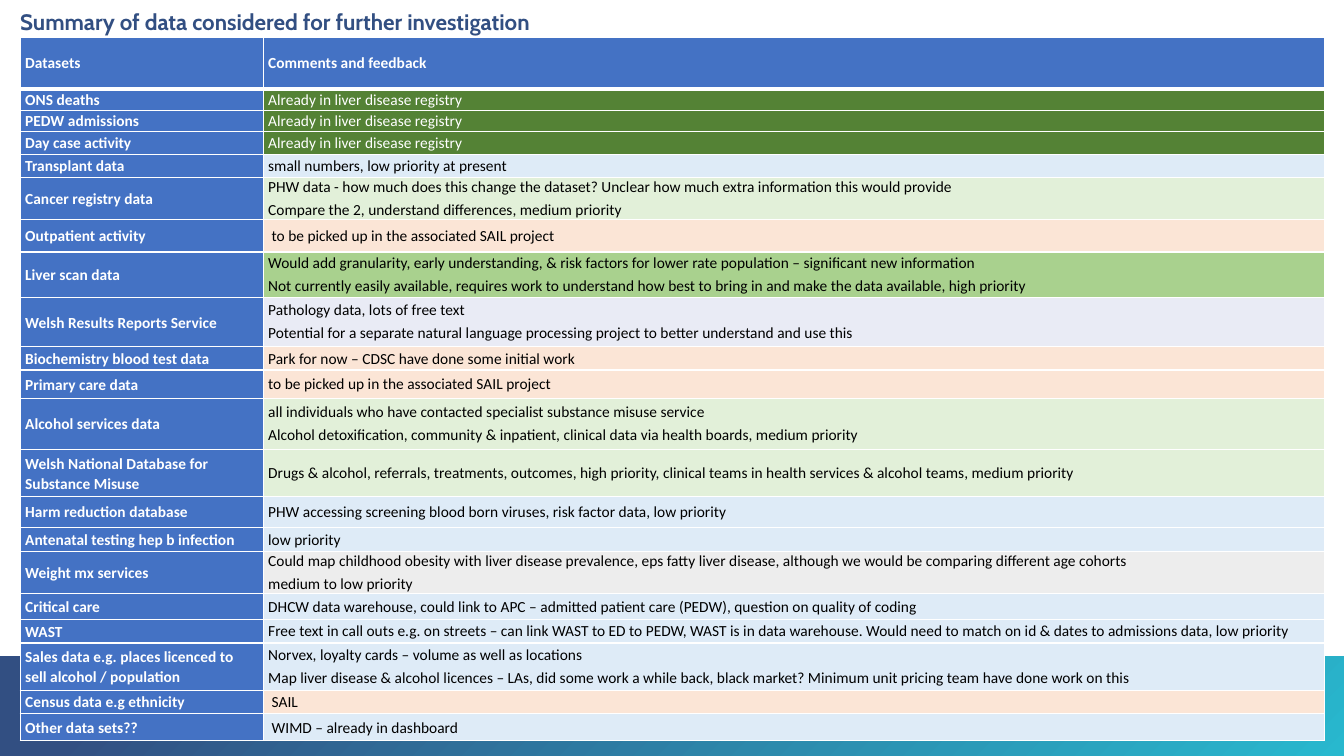
from lxml.etree import SubElement
from pptx import Presentation
from pptx.dml.color import RGBColor
from pptx.enum.shapes import MSO_SHAPE
from pptx.enum.text import MSO_ANCHOR, MSO_AUTO_SIZE, PP_ALIGN
from pptx.oxml.ns import qn
from pptx.util import Inches, Pt

NAVY, TEAL, BLUE, WHITE, BLACK = "324F82", "28B8CE", "4472C4", "FFFFFF", "000000"
DONE, HIGH, MEDIUM, LOW = "548235", "A9D18E", "E2F0D9", "DEEBF7"
PARKED, TEXT, MIXED = "FBE5D6", "E9EBF5", "EDEDED"
WIDE, TIGHT = (1.07, 8), (1, 3)  # line spacing, points after

# Row height, dataset, fill, spacing, comments
ROWS = [
    (0.51, "Datasets", BLUE, WIDE, ["Comments and feedback"]),
    (0.22, "ONS deaths", DONE, WIDE, ["Already in liver disease registry"]),
    (0.19, "PEDW admissions", DONE, WIDE, ["Already in liver disease registry"]),
    (0.23, "Day case activity", DONE, WIDE, ["Already in liver disease registry"]),
    (0.23, "Transplant data", LOW, WIDE, ["small numbers, low priority at present"]),
    (0.41, "Cancer registry data", MEDIUM, TIGHT, [
        "PHW data - how much does this change the dataset? Unclear how much extra "
        "information this would provide",
        "Compare the 2, understand differences, medium priority"]),
    (0.32, "Outpatient activity", PARKED, WIDE,
     [" to be picked up in the associated SAIL project"]),
    (0.45, "Liver scan data", HIGH, TIGHT, [
        "Would add granularity, early understanding, & risk factors for lower rate "
        "population – significant new information",
        "Not currently easily available, requires work to understand how best to "
        "bring in and make the data available, high priority"]),
    (0.49, "Welsh Results Reports Service", TEXT, TIGHT, [
        "Pathology data, lots of free text",
        "Potential for a separate natural language processing project to better "
        "understand and use this"]),
    (0.23, "Biochemistry blood test data", PARKED, WIDE,
     ["Park for now – CDSC have done some initial work"]),
    (0.28, "Primary care data", PARKED, TIGHT,
     ["to be picked up in the associated SAIL project"]),
    (0.51, "Alcohol services data", MEDIUM, TIGHT, [
        "all individuals who have contacted specialist substance misuse service",
        "Alcohol detoxification, community & inpatient, clinical data via health "
        "boards, medium priority"]),
    (0.47, "Welsh National Database for Substance Misuse", MEDIUM, TIGHT, [
        "Drugs & alcohol, referrals, treatments, outcomes, high priority, clinical "
        "teams in health services & alcohol teams, medium priority"]),
    (0.3, "Harm reduction database", LOW, WIDE, [
        "PHW accessing screening blood born viruses, risk factor data, low priority"]),
    (0.24, "Antenatal testing hep b infection", LOW, WIDE, ["low priority"]),
    (0.42, "Weight mx services", MIXED, TIGHT, [
        "Could map childhood obesity with liver disease prevalence, eps fatty liver "
        "disease, although we would be comparing different age cohorts",
        "medium to low priority"]),
    (0.26, "Critical care", LOW, WIDE, [
        "DHCW data warehouse, could link to APC – admitted patient care (PEDW), "
        "question on quality of coding"]),
    (0.23, "WAST", LOW, TIGHT, [
        "Free text in call outs e.g. on streets – can link WAST to ED to PEDW, WAST "
        "is in data warehouse. Would need to match on id & dates to admissions "
        "data, low priority"]),
    (0.47, "Sales data e.g. places licenced to sell alcohol / population", LOW, TIGHT, [
        "Norvex, loyalty cards – volume as well as locations",
        "Map liver disease & alcohol licences – LAs, did some work a while back, "
        "black market? Minimum unit pricing team have done work on this"]),
    (0.23, "Census data e.g ethnicity", PARKED, WIDE, [" SAIL"]),
    (0.27, "Other data sets??", LOW, WIDE, [" WIMD – already in dashboard"]),
]


def color(code):
    return RGBColor.from_string(code)


def add_run(para, text, size, face, ink, bold):
    run = para.add_run()
    run.text = text
    font = run.font
    font.size, font.name, font.bold = Pt(size), face, bold
    font.color.rgb = color(ink)


def add_band(slide):
    band = slide.shapes.add_shape(
        MSO_SHAPE.RECTANGLE, 0, Inches(6.51), Inches(13.33), Inches(0.99))
    band.shadow.inherit = False
    band.line.fill.background()
    band.fill.gradient()
    band.fill.gradient_angle = 315
    for stop, code, place in zip(band.fill.gradient_stops, (NAVY, TEAL), (0.1, 1)):
        stop.color.rgb = color(code)
        stop.position = place


def set_title(slide, text):
    title = slide.shapes.title
    title.left, title.top = Inches(0.2), Inches(0.11)
    title.width, title.height = Inches(11.77), Inches(0.43)
    frame = title.text_frame
    frame.margin_left = frame.margin_right = 0
    frame.margin_top = frame.margin_bottom = 0
    frame.vertical_anchor = MSO_ANCHOR.TOP
    frame.auto_size = MSO_AUTO_SIZE.NONE
    para = frame.paragraphs[0]
    para.alignment = PP_ALIGN.LEFT
    para.line_spacing = 0.9
    para.space_before = Pt(0)
    add_run(para, text, 16, "Cabin", NAVY, True)


def set_edges(cell, top, base):
    props = cell._tc.get_or_add_tcPr()
    sides = (("a:lnL", 1), ("a:lnR", 1), ("a:lnT", top), ("a:lnB", base))
    for spot, (tag, width) in enumerate(sides):
        line = SubElement(props, qn(tag), w=str(Pt(width)))
        fill = SubElement(line, qn("a:solidFill"))
        SubElement(fill, qn("a:srgbClr"), val=WHITE)
        props.insert(spot, line)


def fill_cell(cell, lines, back, ink, bold, spacing):
    cell.fill.solid()
    cell.fill.fore_color.rgb = color(back)
    cell.vertical_anchor = MSO_ANCHOR.MIDDLE
    cell.margin_left = cell.margin_right = Inches(0.05)
    cell.margin_top = cell.margin_bottom = 0
    frame = cell.text_frame
    for spot, text in enumerate(lines):
        para = frame.add_paragraph() if spot else frame.paragraphs[0]
        para.line_spacing, para.space_after = spacing[0], Pt(spacing[1])
        add_run(para, text, 11, "Calibri", ink, bold)


def add_grid(slide):
    grid = slide.shapes.add_table(
        len(ROWS), 2, Inches(0.2), Inches(0.37), Inches(12.94), Inches(6.97)).table
    grid.horz_banding = False
    for col, width in zip(grid.columns, (2.41, 10.53)):
        col.width = Inches(width)
    for spot, (height, name, back, spacing, notes) in enumerate(ROWS):
        grid.rows[spot].height = Inches(height)
        left, right = grid.cell(spot, 0), grid.cell(spot, 1)
        ink = WHITE if back in (BLUE, DONE) else BLACK
        fill_cell(left, [name], BLUE, WHITE, True, WIDE)
        fill_cell(right, notes, back, ink, spot == 0, spacing)
        # Thick rule under the header
        for cell in (left, right):
            set_edges(cell, 3 if spot == 1 else 1, 3 if spot == 0 else 1)


def main():
    deck = Presentation()
    deck.slide_width, deck.slide_height = Inches(13.33), Inches(7.5)
    slide = deck.slides.add_slide(deck.slide_layouts[5])
    add_band(slide)
    set_title(slide, "Summary of data considered for further investigation")
    add_grid(slide)
    deck.save("out.pptx")


if __name__ == "__main__":
    main()
